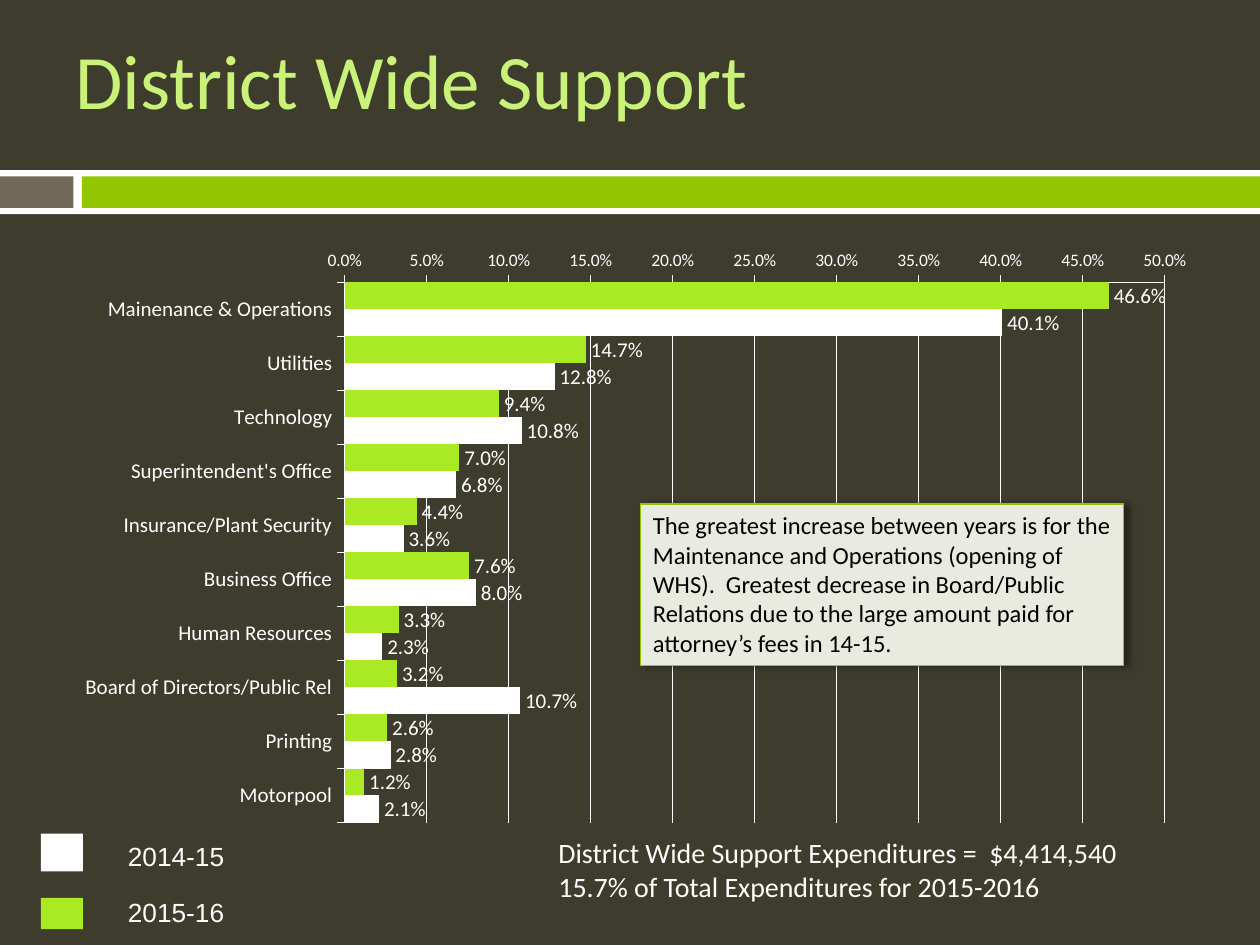
from dataclasses import dataclass

from lxml import etree
from pptx import Presentation
from pptx import util as u
from pptx.chart.data import CategoryChartData
from pptx.dml.color import RGBColor
from pptx.enum import chart as charts, shapes, text
from pptx.oxml import parse_xml
from pptx.oxml.ns import nsdecls, qn


@dataclass(frozen=True)
class Theme:
    background: str = "3E3D2D"
    title: str = "CAF278"
    white: str = "FFFFFF"
    black: str = "000000"
    brown: str = "71685A"
    green: str = "94C600"
    lime: str = "AAEA25"
    panel: str = "E9EAE0"
    font: str = "Calibri"
    legend_font: str = "Arial"
    title_size: int = 44
    total_size: int = 16
    legend_size: int = 15
    note_size: int = 14
    label_size: int = 12
    scale_size: int = 10


THEME = Theme()
COLUMNS, ROWS = 120, 90

TITLE = "District Wide Support"
NOTE = (
    "The greatest increase between years is for the Maintenance and Operations "
    "(opening of WHS).  Greatest decrease in Board/Public Relations due to the "
    "large amount paid for attorney’s fees in 14-15."
)
TOTALS = [
    "District Wide Support Expenditures =  $4,414,540",
    "15.7% of Total Expenditures for 2015-2016",
]
SPENDING = [
    ("Mainenance & Operations", 0.466, 0.401),
    ("Utilities", 0.147, 0.128),
    ("Technology", 0.094, 0.108),
    ("Superintendent's Office", 0.070, 0.068),
    ("Insurance/Plant Security", 0.044, 0.036),
    ("Business Office", 0.076, 0.080),
    ("Human Resources", 0.033, 0.023),
    ("Board of Directors/Public Rel", 0.032, 0.107),
    ("Printing", 0.026, 0.028),
    ("Motorpool", 0.012, 0.021),
]
SERIES = [("2015-16", THEME.lime), ("2014-15", THEME.white)]
BANDS = [
    ((0, 16.2, 120, 4.2), THEME.white),
    ((0, 16.8, 7, 3), THEME.brown),
    ((7.8, 16.8, 112.2, 3), THEME.green),
]
LEGEND = [
    ("2014-15", THEME.white, (3.9, 79.4, 4, 3.6), (11, 79.4, 12, 4.2)),
    ("2015-16", THEME.lime, (3.9, 85.5, 4, 3), (11, 84.8, 12, 4.2)),
]
PLOT = {"x": 0.232, "y": 0.1, "w": 0.73, "h": 0.872}

presentation = Presentation()
presentation.slide_width = u.Inches(10)
presentation.slide_height = u.Inches(7.5)
slide = presentation.slides.add_slide(presentation.slide_layouts[6])


def rgb(color):
    return RGBColor.from_string(color)


def place(cells):
    left, top, width, height = cells
    across = presentation.slide_width / COLUMNS
    down = presentation.slide_height / ROWS
    return [round(v) for v in (left * across, top * down, width * across, height * down)]


def set_font(font, size, color, name=THEME.font):
    font.size = u.Pt(size)
    font.name = name
    font.color.rgb = rgb(color)


def write(shape, lines, size, color, name=THEME.font, anchor=text.MSO_ANCHOR.TOP):
    frame = shape.text_frame
    frame.word_wrap = True
    frame.vertical_anchor = anchor
    frame.text = "\n".join(lines)
    for paragraph in frame.paragraphs:
        paragraph.alignment = text.PP_ALIGN.LEFT
        set_font(paragraph.font, size, color, name)


def add_text(cells, *arguments, **options):
    write(slide.shapes.add_textbox(*place(cells)), *arguments, **options)


def add_box(cells, color):
    shape = slide.shapes.add_shape(shapes.MSO_SHAPE.RECTANGLE, *place(cells))
    shape.shadow.inherit = False
    shape.fill.solid()
    shape.fill.fore_color.rgb = rgb(color)
    shape.line.fill.background()
    return shape


def style_line(line):
    line.color.rgb = rgb(THEME.white)
    line.width = u.Pt(0.75)


def add_spending_chart(cells):
    data = CategoryChartData(number_format="0.0%")
    names, *columns = zip(*SPENDING)
    data.categories = names
    for (name, _), values in zip(SERIES, columns):
        data.add_series(name, values)
    chart = slide.shapes.add_chart(
        charts.XL_CHART_TYPE.BAR_CLUSTERED, *place(cells), data
    ).chart
    chart.has_legend = chart.has_title = False
    set_font(chart.font, THEME.label_size, THEME.white)

    plot = chart.plots[0]
    plot.gap_width = plot.overlap = 0
    plot.vary_by_categories = False
    for series, (_, color) in zip(plot.series, SERIES):
        series.format.fill.solid()
        series.format.fill.fore_color.rgb = rgb(color)
        series.invert_if_negative = False
        labels = series.data_labels
        labels.show_value = True
        labels.number_format = "0.0%"
        labels.number_format_is_linked = False
        labels.position = charts.XL_LABEL_POSITION.OUTSIDE_END
        set_font(labels.font, THEME.label_size, THEME.white)

    scale = chart.value_axis
    scale.minimum_scale, scale.maximum_scale, scale.major_unit = 0, 0.5, 0.05
    scale.tick_labels.number_format = "0.0%"
    scale.tick_labels.number_format_is_linked = False
    style_line(scale.major_gridlines.format.line)
    chart.category_axis.reverse_order = True
    for axis, size in ((chart.category_axis, THEME.label_size), (scale, THEME.scale_size)):
        axis.major_tick_mark = charts.XL_TICK_MARK.OUTSIDE
        style_line(axis.format.line)
        set_font(axis.tick_labels.font, size, THEME.white)

    area = plot._element.getparent()
    for old in area.findall(qn("c:layout")):
        area.remove(old)
    sizes = "".join(f'<c:{key} val="{value}"/>' for key, value in PLOT.items())
    area.insert(0, parse_xml(
        f'<c:layout {nsdecls("c")}><c:manualLayout><c:layoutTarget val="inner"/>'
        f'<c:xMode val="edge"/><c:yMode val="edge"/>{sizes}</c:manualLayout></c:layout>'
    ))


def add_note(cells):
    note = add_box(cells, THEME.panel)
    note.line.color.rgb = rgb(THEME.green)
    note.line.width = u.Pt(0.79)
    write(note, [NOTE], THEME.note_size, THEME.black)
    effects = note._element.spPr.find(qn("a:effectLst"))
    shadow = etree.SubElement(
        effects, qn("a:outerShdw"), blurRad=str(u.Pt(4)), dist=str(u.Pt(3)),
        dir="0", algn="ctr", rotWithShape="0",
    )
    color = etree.SubElement(shadow, qn("a:srgbClr"), val=THEME.black)
    etree.SubElement(color, qn("a:alpha"), val="40000")


slide.background.fill.solid()
slide.background.fill.fore_color.rgb = rgb(THEME.background)
for cells, color in BANDS:
    add_box(cells, color)
add_text((6, 0, 108, 15), [TITLE], THEME.title_size, THEME.title,
         anchor=text.MSO_ANCHOR.MIDDLE)
add_spending_chart((8, 21, 107, 59))
add_note((61, 48, 46, 15.4))
add_text((52, 79, 58, 8), TOTALS, THEME.total_size, THEME.white)
for label, color, swatch, caption in LEGEND:
    add_box(swatch, color)
    add_text(caption, [label], THEME.legend_size, THEME.white, THEME.legend_font)

presentation.save("out.pptx")
